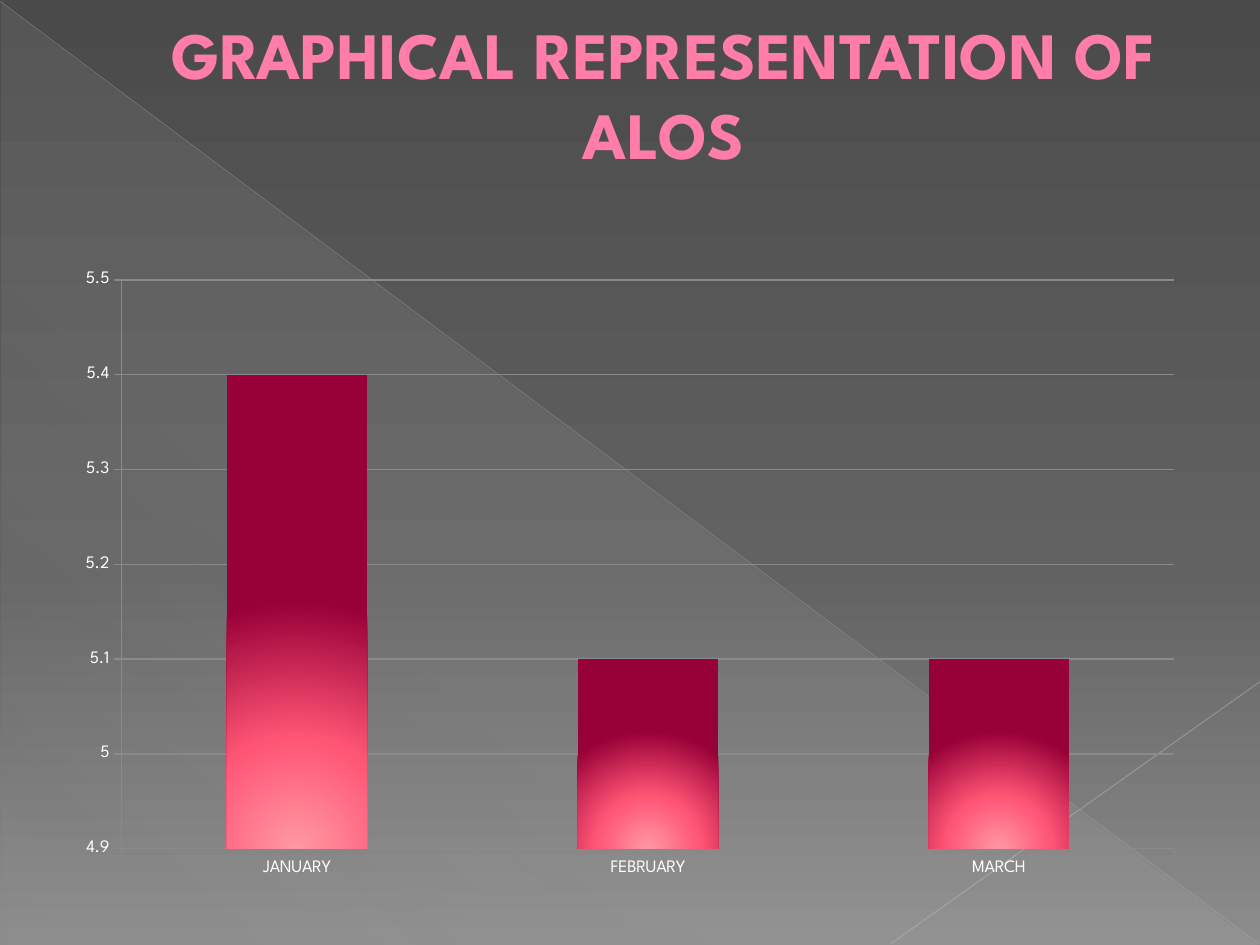
from lxml import etree
from pptx import Presentation
from pptx.chart.data import CategoryChartData
from pptx.dml.color import RGBColor
from pptx.enum.chart import XL_CHART_TYPE, XL_TICK_MARK
from pptx.enum.shapes import MSO_CONNECTOR, MSO_SHAPE
from pptx.enum.text import MSO_ANCHOR, PP_ALIGN
from pptx.oxml.ns import qn
from pptx.util import Inches, Pt

COLUMNS = XL_CHART_TYPE.COLUMN_CLUSTERED
TICK_OUTSIDE = XL_TICK_MARK.OUTSIDE
STRAIGHT = MSO_CONNECTOR.STRAIGHT
TRIANGLE = MSO_SHAPE.RIGHT_TRIANGLE
MIDDLE = MSO_ANCHOR.MIDDLE
CENTER = PP_ALIGN.CENTER
FONT = "League Spartan"


def color(hex_code):
    return RGBColor.from_string(hex_code)


def add_color(parent, hex_code, opacity=100):
    """Append a colour, with its opacity in percent, to an XML element."""
    clr = etree.SubElement(parent, qn("a:srgbClr"), val=hex_code)
    if opacity < 100:
        etree.SubElement(clr, qn("a:alpha"), val=str(opacity * 1000))


def set_gradient(fill, owner, stops, angle=None):
    """Fill with (position, colour, opacity) stops; radial from the bottom without an angle."""
    fill.gradient()
    gradient = next(owner.iter(qn("a:gradFill")))
    for child in list(gradient):
        gradient.remove(child)
    stop_list = etree.SubElement(gradient, qn("a:gsLst"))
    for position, hex_code, opacity in stops:
        stop = etree.SubElement(stop_list, qn("a:gs"), pos=str(position * 1000))
        add_color(stop, hex_code, opacity)
    if angle is None:
        radial = etree.SubElement(gradient, qn("a:path"), path="circle")
        etree.SubElement(radial, qn("a:fillToRect"),
                         l="50000", t="100000", r="50000", b="0")
    else:
        etree.SubElement(gradient, qn("a:lin"), ang=str(angle * 60000), scaled="0")


def add_backdrop(slide):
    # Grey background
    background = slide.background
    set_gradient(background.fill, slide.element,
                 [(0, "4A4A4A", 100), (60, "626262", 100), (100, "8C8C8C", 100)], 90)

    # Translucent triangle
    triangle = slide.shapes.add_shape(
        TRIANGLE, Inches(0.01), Inches(0.02), Inches(9.98), Inches(7.48))
    triangle.shadow.inherit = False
    triangle.line.fill.background()
    set_gradient(triangle.fill, triangle.element,
                 [(0, "D2D2D2", 10), (70, "D2D2D2", 8), (100, "D2D2D2", 1)], 133)

    # Diagonal hairlines
    for x1, y1, x2, y2, hex_code, width, opacity in (
            (0, 0.01, 9.99, 7.49, "BFBFBF", 0.39, 35),
            (10, 5.41, 7.07, 7.49, "C6C6C6", 0.47, 45)):
        hairline = slide.shapes.add_connector(
            STRAIGHT, Inches(x1), Inches(y1), Inches(x2), Inches(y2))
        hairline.line.width = Pt(width)
        hairline.line.fill.solid()
        solid = next(hairline.element.iter(qn("a:solidFill")))
        for child in list(solid):
            solid.remove(child)
        add_color(solid, hex_code, opacity)
        etree.SubElement(hairline.element.spPr, qn("a:effectLst"))


def add_title(slide, left, top, width, height):
    title = slide.shapes.title
    title.left, title.top, title.width, title.height = left, top, width, height
    frame = title.text_frame
    frame.word_wrap = True
    frame.vertical_anchor = MIDDLE
    paragraph = frame.paragraphs[0]
    paragraph.alignment = CENTER
    properties = paragraph._p.get_or_add_pPr()
    properties.set("marL", str(Inches(0.53)))
    properties.set("indent", "0")
    run = paragraph.add_run()
    run.text = "GRAPHICAL REPRESENTATION OF ALOS"
    run.font.name = FONT
    run.font.size = Pt(37.8)
    run.font.bold = True
    run.font.color.rgb = color("FF7DA7")
    # Thin letter outline
    outline = etree.Element(qn("a:ln"), w=str(Pt(0.5)))
    add_color(etree.SubElement(outline, qn("a:solidFill")), "B12761")
    run.font._element.insert(0, outline)
    # The title ends in a line break, which lifts its two lines
    paragraph.add_line_break()
    paragraph.font.size = Pt(37.8)
    paragraph.font.name = FONT


def add_alos_chart(slide, left, top, width, height):
    alos = CategoryChartData()
    alos.categories = ["JANUARY", "FEBRUARY", "MARCH"]
    alos.add_series("Series 1", (5.4, 5.1, 5.1))
    chart = slide.shapes.add_chart(COLUMNS, left, top, width, height, alos).chart
    chart.has_legend = False
    chart.has_title = False
    chart.font.name = FONT
    chart.font.size = Pt(10)
    chart.font.color.rgb = color("FFFFFF")

    # Axes and gridlines
    months, days = chart.category_axis, chart.value_axis
    days.minimum_scale, days.maximum_scale, days.major_unit = 4.9, 5.5, 0.1
    days.tick_labels.number_format = "General"
    days.tick_labels.number_format_is_linked = False
    days.has_major_gridlines = True
    for axis in (months, days):
        axis.major_tick_mark = TICK_OUTSIDE
    for part in (months, days, days.major_gridlines):
        part.format.line.color.rgb = color("8A8A8A")
        part.format.line.width = Pt(0.75)

    # Columns glowing from the base
    plot = chart.plots[0]
    plot.gap_width = 150
    plot.vary_by_categories = False
    columns = plot.series[0]
    columns.invert_if_negative = False
    set_gradient(columns.format.fill, columns._element,
                 [(0, "FF98A2", 100), (45, "FF5575", 100), (100, "980038", 100)])


def main():
    deck = Presentation()
    deck.slide_width, deck.slide_height = Inches(10), Inches(7.5)
    slide = deck.slides.add_slide(deck.slide_layouts[5])
    add_backdrop(slide)
    add_title(slide, Inches(0.5), Inches(0.29), Inches(9), Inches(1.53))
    add_alos_chart(slide, Inches(0.5), Inches(2.06), Inches(9), Inches(5))
    deck.save("out.pptx")


if __name__ == "__main__":
    main()
